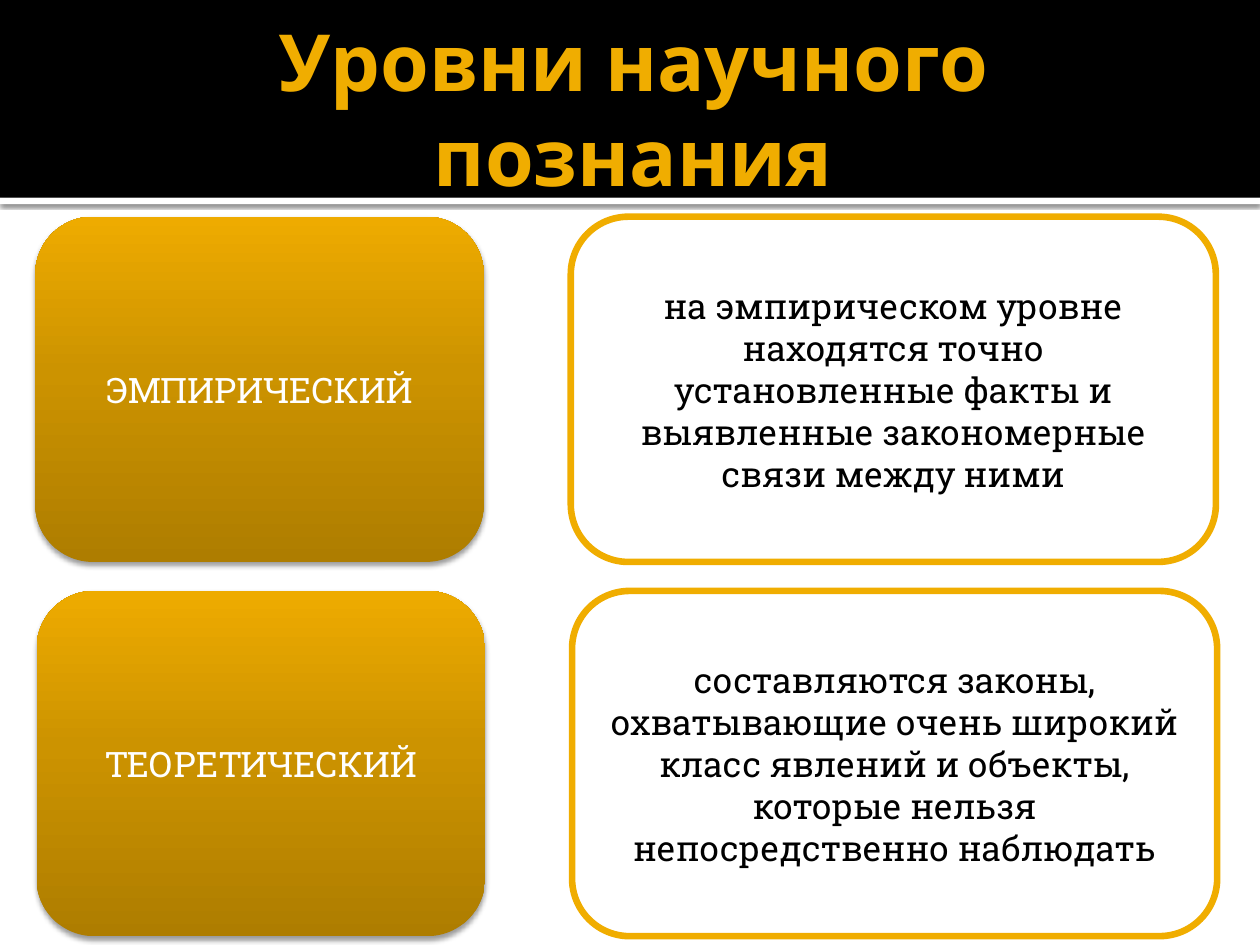
from copy import deepcopy

from lxml import etree
from pptx import Presentation
from pptx.dml.color import RGBColor
from pptx.enum.shapes import MSO_SHAPE
from pptx.enum.text import MSO_ANCHOR, MSO_AUTO_SIZE, PP_ALIGN
from pptx.oxml.ns import qn
from pptx.util import Inches, Pt

BLACK = RGBColor(0x00, 0x00, 0x00)
WHITE = RGBColor(0xFF, 0xFF, 0xFF)
AMBER = RGBColor(0xF0, 0xAD, 0x00)
GRADIENT = [
    (0, RGBColor(0xAE, 0x7D, 0x00)),
    (0.55, RGBColor(0xCC, 0x93, 0x00)),
    (1, RGBColor(0xEE, 0xAB, 0x00)),
]

HEADER_HEIGHT = 1.57
ROW_TOP, ROW_STEP, CARD_HEIGHT = 1.72, 2.97, 2.74
LEVEL_LEFT, LEVEL_WIDTH = 0.28, 3.56
DETAIL_LEFT, DETAIL_WIDTH = 4.53, 5.12
LEVELS = [
    ("ЭМПИРИЧЕСКИЙ",
     "на эмпирическом уровне находятся точно установленные факты "
     "и выявленные закономерные связи между ними"),
    ("ТЕОРЕТИЧЕСКИЙ",
     "составляются законы, охватывающие очень широкий класс явлений "
     "и объекты, которые нельзя непосредственно наблюдать"),
]


def add_block(kind, left, top, width, height, fill_color, text="", text_color=BLACK):
    shape = slide.shapes.add_shape(
        kind, Inches(left), Inches(top), Inches(width), Inches(height))
    shape.shadow.inherit = False
    shape.fill.solid()
    shape.fill.fore_color.rgb = fill_color
    shape.line.fill.background()
    if text:
        frame = shape.text_frame
        frame.word_wrap = True
        frame.vertical_anchor = MSO_ANCHOR.MIDDLE
        paragraph = frame.paragraphs[0]
        paragraph.text = text
        paragraph.alignment = PP_ALIGN.CENTER
        paragraph.font.name = "Roboto Slab"
        paragraph.font.size = Pt(20)
        paragraph.font.color.rgb = text_color
    return shape


def add_shadow(shape, blur, distance, opacity):
    """Cast a black shadow straight down; opacity is in percent."""
    effects = shape._element.spPr.find(qn("a:effectLst"))
    shadow = etree.SubElement(
        effects, qn("a:outerShdw"), blurRad=str(Pt(blur)), dist=str(Pt(distance)),
        dir="5400000", algn="ctr", rotWithShape="0")
    color = etree.SubElement(shadow, qn("a:srgbClr"), val=str(BLACK))
    etree.SubElement(color, qn("a:alpha"), val=str(opacity * 1000))


presentation = Presentation()
presentation.slide_width, presentation.slide_height = Inches(10), Inches(7.5)
slide = presentation.slides.add_slide(presentation.slide_layouts[5])

# Header bands lie behind the title
title = slide.shapes.title
stripe = add_block(MSO_SHAPE.RECTANGLE, 0, HEADER_HEIGHT, 10, 0.05, WHITE)
add_shadow(stripe, 2.5, 0.8, 60)
header = add_block(MSO_SHAPE.RECTANGLE, 0, 0, 10, HEADER_HEIGHT, BLACK)
for band in (stripe, header):
    title._element.addprevious(band._element)

title.left, title.top = Inches(0.5), Inches(0.17)
title.width, title.height = Inches(9), Inches(1.37)
frame = title.text_frame
frame.auto_size = MSO_AUTO_SIZE.NONE
frame.word_wrap = True
frame.vertical_anchor = MSO_ANCHOR.MIDDLE
frame.margin_left = Inches(0.1)
frame.margin_top = frame.margin_right = frame.margin_bottom = Inches(0.05)
paragraph = frame.paragraphs[0]
paragraph.text = "Уровни научного познания"
paragraph.alignment = PP_ALIGN.CENTER
paragraph.font.name = "Cabin"
paragraph.font.size = Pt(45)
paragraph.font.bold = True
paragraph.font.color.rgb = AMBER

# One row per level: its name, then its description
for row, (name, description) in enumerate(LEVELS):
    top = ROW_TOP + row * ROW_STEP
    shift = row * 0.01
    level = add_block(MSO_SHAPE.ROUNDED_RECTANGLE, LEVEL_LEFT + shift, top,
                      LEVEL_WIDTH, CARD_HEIGHT, WHITE, name, WHITE)
    level.fill.gradient()
    level.fill.gradient_angle = 90
    stop_list = level._element.spPr.find(qn("a:gradFill")).find(qn("a:gsLst"))
    stop_list.append(deepcopy(stop_list[0]))
    for stop, (position, color) in zip(level.fill.gradient_stops, GRADIENT):
        stop.position = position
        stop.color.rgb = color
    add_shadow(level, 3.1, 2, 38)

    detail = add_block(MSO_SHAPE.ROUNDED_RECTANGLE, DETAIL_LEFT + shift, top,
                       DETAIL_WIDTH, CARD_HEIGHT, WHITE, description)
    detail.line.color.rgb = AMBER
    detail.line.width = Pt(3.78)

presentation.save("out.pptx")
